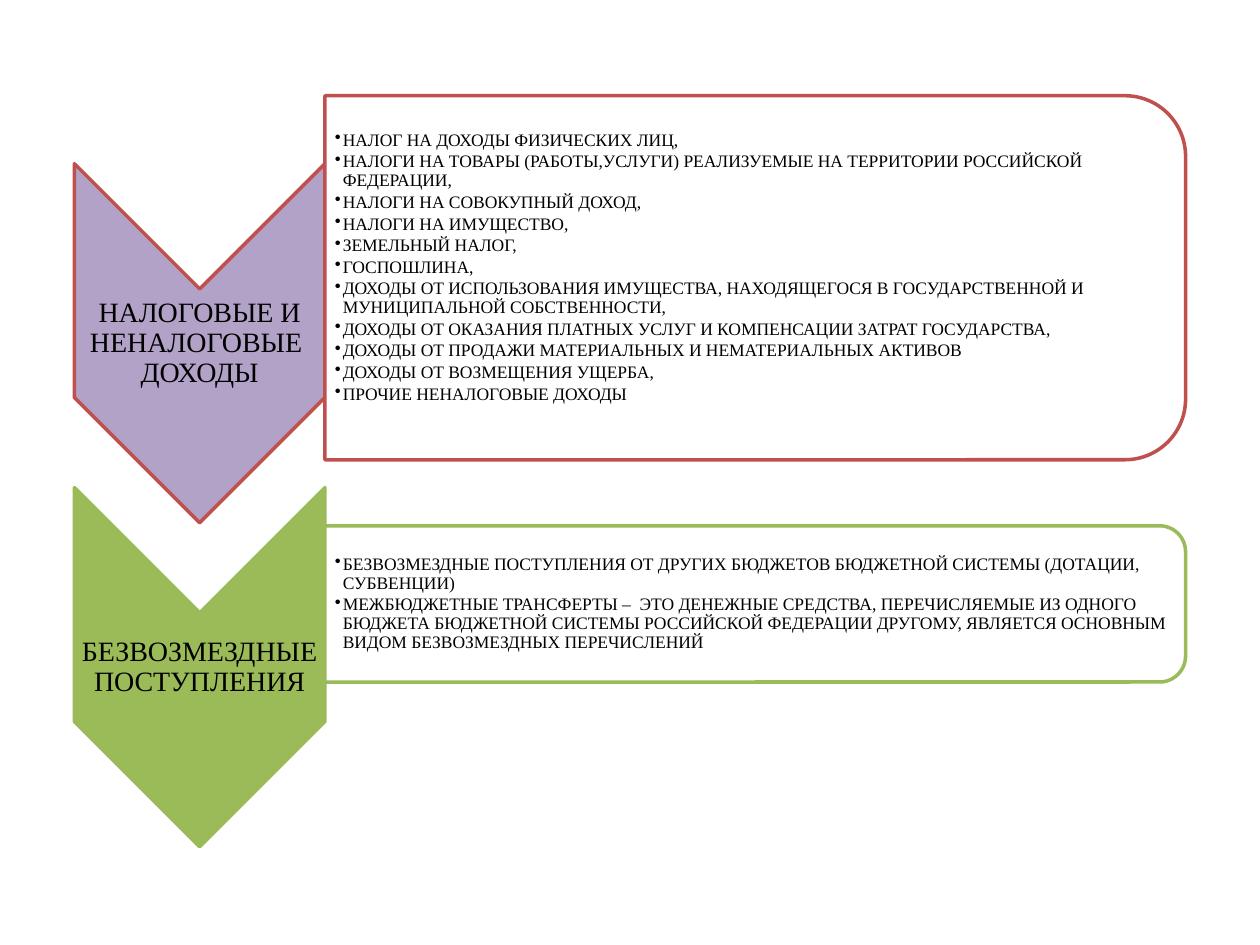
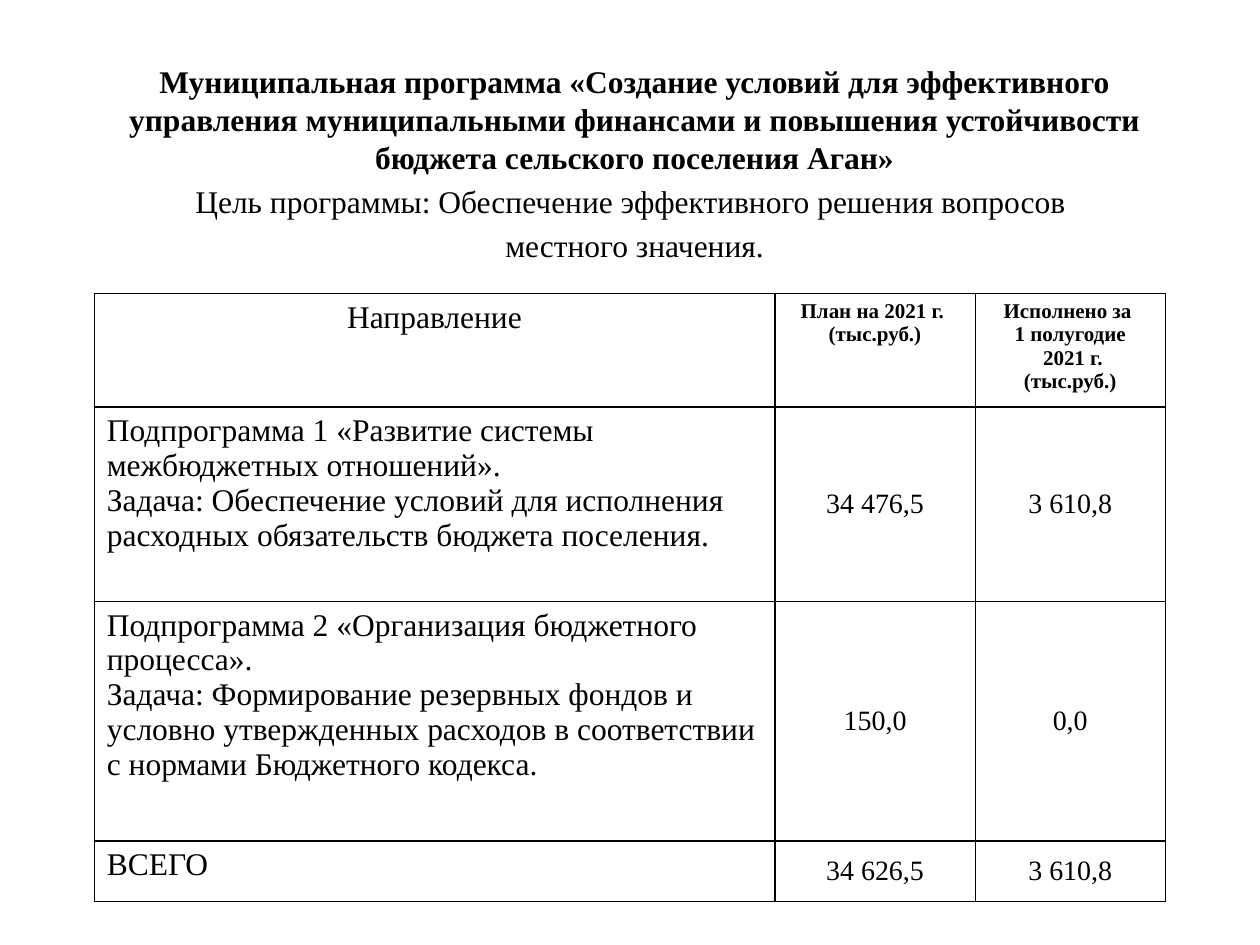
import pptx
import pptx.util
import pptx.dml.color
import pptx.enum.shapes
import pptx.enum.text
import pptx.oxml
import pptx.oxml.ns

Cm = pptx.util.Cm
Pt = pptx.util.Pt
KIND = pptx.enum.shapes.MSO_SHAPE
ALIGN = pptx.enum.text.PP_ALIGN
ANCHOR = pptx.enum.text.MSO_ANCHOR
FONT = "Times New Roman"
SPACE = pptx.oxml.ns.nsdecls("a")
HUES = {"ink": "000000", "paper": "FFFFFF", "red": "C0504D",
        "mauve": "B3A2C7", "green": "9BBB59"}

TAXES = [
    "НАЛОГ НА ДОХОДЫ ФИЗИЧЕСКИХ ЛИЦ,",
    "НАЛОГИ НА ТОВАРЫ (РАБОТЫ,УСЛУГИ) РЕАЛИЗУЕМЫЕ НА ТЕРРИТОРИИ РОССИЙСКОЙ ФЕДЕРАЦИИ,",
    "НАЛОГИ НА СОВОКУПНЫЙ ДОХОД,",
    "НАЛОГИ НА ИМУЩЕСТВО,",
    "ЗЕМЕЛЬНЫЙ НАЛОГ,",
    "ГОСПОШЛИНА,",
    "ДОХОДЫ ОТ ИСПОЛЬЗОВАНИЯ ИМУЩЕСТВА, НАХОДЯЩЕГОСЯ В ГОСУДАРСТВЕННОЙ И МУНИЦИПАЛЬНОЙ СОБСТВЕННОСТИ,",
    "ДОХОДЫ ОТ ОКАЗАНИЯ ПЛАТНЫХ УСЛУГ И КОМПЕНСАЦИИ ЗАТРАТ ГОСУДАРСТВА,",
    "ДОХОДЫ ОТ ПРОДАЖИ МАТЕРИАЛЬНЫХ И НЕМАТЕРИАЛЬНЫХ АКТИВОВ",
    "ДОХОДЫ ОТ ВОЗМЕЩЕНИЯ УЩЕРБА,",
    "ПРОЧИЕ НЕНАЛОГОВЫЕ ДОХОДЫ",
]
GRANTS = [
    "БЕЗВОЗМЕЗДНЫЕ ПОСТУПЛЕНИЯ ОТ ДРУГИХ БЮДЖЕТОВ БЮДЖЕТНОЙ СИСТЕМЫ (ДОТАЦИИ, СУБВЕНЦИИ)",
    "МЕЖБЮДЖЕТНЫЕ ТРАНСФЕРТЫ –  ЭТО ДЕНЕЖНЫЕ СРЕДСТВА, ПЕРЕЧИСЛЯЕМЫЕ ИЗ ОДНОГО БЮДЖЕТА "
    "БЮДЖЕТНОЙ СИСТЕМЫ РОССИЙСКОЙ ФЕДЕРАЦИИ ДРУГОМУ, ЯВЛЯЕТСЯ ОСНОВНЫМ ВИДОМ "
    "БЕЗВОЗМЕЗДНЫХ ПЕРЕЧИСЛЕНИЙ",
]
GOAL = [
    "Муниципальная программа «Создание условий для эффективного управления муниципальными "
    "финансами и повышения устойчивости бюджета сельского поселения Аган»",
    "Цель программы: Обеспечение эффективного решения вопросов ",
    "местного значения.",
]
PLAN = [
    [["Направление"], ["План на 2021 г. ", "(тыс.руб.)"],
     ["Исполнено за ", "1 полугодие", " 2021 г.", "(тыс.руб.)"]],
    [["Подпрограмма 1 «Развитие системы межбюджетных отношений».",
      "Задача: Обеспечение условий для исполнения расходных обязательств бюджета поселения."],
     ["34 476,5"], ["3 610,8"]],
    [["Подпрограмма 2 «Организация бюджетного процесса».",
      "Задача: Формирование резервных фондов и условно утвержденных расходов "
      "в соответствии с нормами Бюджетного кодекса."],
     ["150,0"], ["0,0"]],
    [["ВСЕГО"], ["34 626,5"], ["3 610,8"]],
]


def tint(name):
    return pptx.dml.color.RGBColor.from_string(HUES[name])


def write(frame, lines, size, align=ALIGN.LEFT, bold=False):
    frame.word_wrap = True
    frame.text = "\n".join(lines)
    for para in frame.paragraphs:
        para.alignment = align
        para.font.name = FONT
        para.font.size = Pt(size)
        para.font.bold = bold
        para.font.color.rgb = tint("ink")
    return frame.paragraphs


def add_text(slide, box, pads):
    frame = slide.shapes.add_textbox(*map(Cm, box)).text_frame
    frame.margin_left, frame.margin_top, frame.margin_right, frame.margin_bottom = map(Cm, pads)
    frame.vertical_anchor = ANCHOR.MIDDLE
    return frame


def add_turned(slide, kind, box, fill, line):
    left, top, width, height = box
    shift = (width - height) / 2
    shape = slide.shapes.add_shape(
        kind, Cm(left + shift), Cm(top - shift), Cm(height), Cm(width))
    shape.rotation = 90
    shape.shadow.inherit = False
    shape.fill.solid()
    shape.fill.fore_color.rgb = tint(fill)
    shape.line.color.rgb = tint(line)
    shape.line.width = Pt(2)


def add_arrow(slide, box, label, fill, line):
    left, top, width, height = box
    add_turned(slide, KIND.CHEVRON, box, fill, line)
    frame = add_text(slide, (left, top + width / 2, width, height - width), [0.03] * 4)
    for para in write(frame, [label], 16, ALIGN.CENTER):
        para.line_spacing = 0.9


def add_panel(slide, box, items, line, foot):
    left, top, width, height = box
    add_turned(slide, KIND.ROUND_2_SAME_RECTANGLE, box, "paper", line)
    inset = height * 0.05
    frame = add_text(slide, (left, top + inset, width - inset, height - 2 * inset),
                     (0.2, 0.03, 0.03, foot))
    for para in write(frame, items, 10):
        para.line_spacing = 0.9
        para.space_after = Pt(1.5)
        props = para._p.get_or_add_pPr()
        props.set("marL", str(Cm(0.16)))
        props.set("indent", str(-Cm(0.16)))
        mark = pptx.oxml.parse_xml(f'<a:buChar {SPACE} char="•"/>')
        props.find(pptx.oxml.ns.qn("a:defRPr")).addprevious(mark)


def add_goal(slide, box):
    frame = add_text(slide, box, (0.25, 0.13, 0.25, 0.13))
    frame.vertical_anchor = ANCHOR.TOP
    paras = write(frame, GOAL, 18, ALIGN.CENTER)
    paras[0].font.bold = True
    for para in paras:
        para.space_before = Pt(3.6)


def frame_cell(cell):
    props = cell._tc.get_or_add_tcPr()
    for spot, side in enumerate(("lnL", "lnR", "lnT", "lnB")):
        edge = pptx.oxml.parse_xml(
            f'<a:{side} {SPACE} w="{Pt(1)}"><a:solidFill>'
            f'<a:srgbClr val="{HUES["ink"]}"/></a:solidFill></a:{side}>')
        props.insert(spot, edge)


def add_plan(slide, box):
    grid = slide.shapes.add_table(len(PLAN), len(PLAN[0]), *map(Cm, box)).table
    for col, width in zip(grid.columns, (13.72, 4.04, 3.83)):
        col.width = Cm(width)
    for row, height in zip(grid.rows, (2.13, 3.92, 4.83, 1.22)):
        row.height = Cm(height)
    for i, row in enumerate(PLAN):
        for j, lines in enumerate(row):
            cell = grid.cell(i, j)
            head, first = i == 0, j == 0
            size = 18 if first else 12 if head else 16
            align = ALIGN.CENTER if head or not first else ALIGN.LEFT
            write(cell.text_frame, lines, size, align, head and not first)
            cell.vertical_anchor = ANCHOR.TOP if head or first else ANCHOR.MIDDLE
            cell.fill.solid()
            cell.fill.fore_color.rgb = tint("paper")
            frame_cell(cell)


def fill_income(slide):
    add_arrow(slide, (1.5, 3.3, 5.05, 7.24), "НАЛОГОВЫЕ И НЕНАЛОГОВЫЕ  ДОХОДЫ", "mauve", "red")
    add_panel(slide, (6.55, 1.93, 17.35, 7.34), TAXES, "red", 0.44)
    add_arrow(slide, (1.5, 9.83, 5.05, 7.24), "БЕЗВОЗМЕЗДНЫЕ ПОСТУПЛЕНИЯ", "green", "green")
    add_panel(slide, (6.55, 10.6, 17.35, 3.15), GRANTS, "green", 0.03)


def fill_program(slide):
    add_goal(slide, (1.9, 1.12, 21.79, 4.4))
    add_plan(slide, (1.9, 5.92, 21.59, 12.1))


def main():
    deck = pptx.Presentation()
    deck.slide_width, deck.slide_height = Cm(25.4), Cm(19.05)
    for fill in (fill_income, fill_program):
        fill(deck.slides.add_slide(deck.slide_layouts[6]))
    deck.save("out.pptx")


if __name__ == "__main__":
    main()
